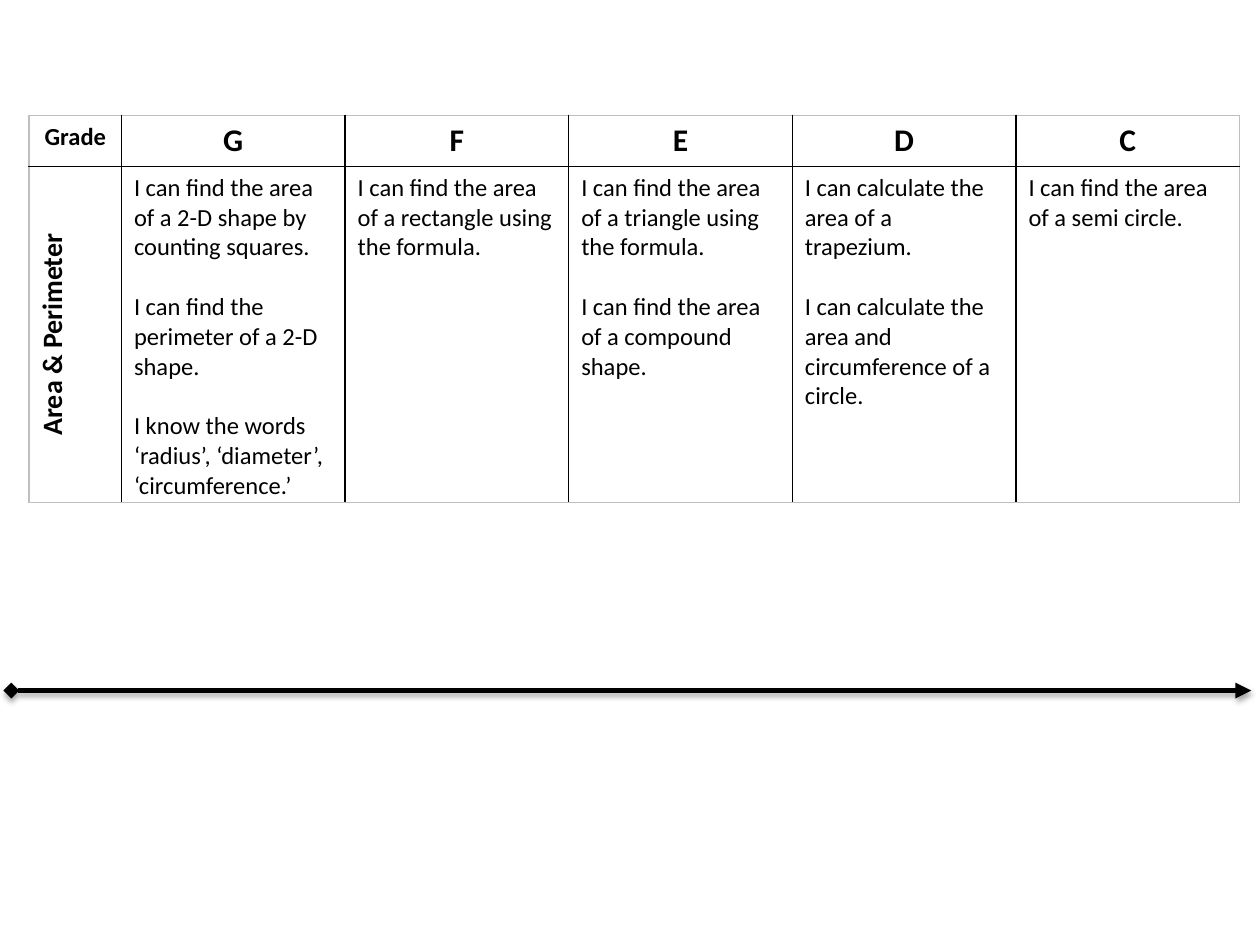
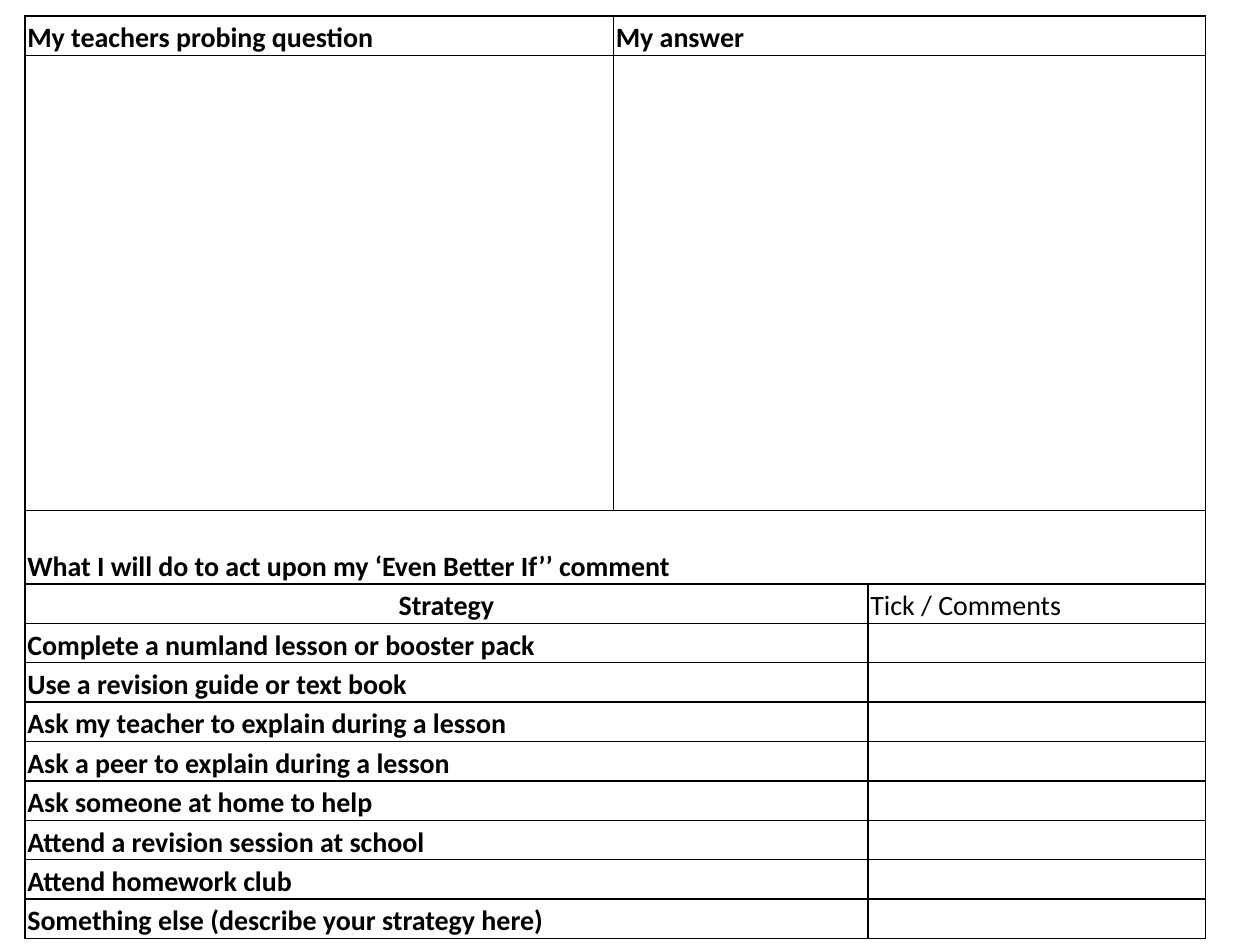
from dataclasses import dataclass

from lxml import etree
from pptx import Presentation
from pptx.dml.color import RGBColor
from pptx.enum.shapes import MSO_CONNECTOR
from pptx.enum.text import MSO_ANCHOR, PP_ALIGN
from pptx.oxml import parse_xml
from pptx.oxml.ns import nsdecls, qn
from pptx.util import Pt


@dataclass(frozen=True)
class Theme:
    font: str = "Calibri"
    ink: str = "000000"
    frame: str = "BFBFBF"
    body: int = 14
    heading: int = 16
    grade: int = 18
    border: float = 1
    arrow: float = 3


class Deck:
    BLANK_LAYOUT = 6

    def __init__(self, theme):
        self.theme = theme
        self.presentation = Presentation()
        self.presentation.slide_width = Pt(720)
        self.presentation.slide_height = Pt(540)
        self.slide = None

    def add_slide(self):
        layout = self.presentation.slide_layouts[self.BLANK_LAYOUT]
        self.slide = self.presentation.slides.add_slide(layout)

    def table(self, left, top, widths, heights, margins, outer):
        """Add an unfilled, ruled table; outer is the colour of its edges."""
        rows, columns = len(heights), len(widths)
        frame = self.slide.shapes.add_table(
            rows, columns, Pt(left), Pt(top), Pt(sum(widths)), Pt(sum(heights)))
        table = frame.table
        table.first_row = table.horz_banding = False
        for column, width in zip(table.columns, widths):
            column.width = Pt(width)
        for row, height in zip(table.rows, heights):
            row.height = Pt(height)
        for r in range(rows):
            for c in range(columns):
                cell = table.cell(r, c)
                (cell.margin_left, cell.margin_top,
                 cell.margin_right, cell.margin_bottom) = map(Pt, margins)
                edges = {"L": c == 0, "R": c == columns - 1,
                         "T": r == 0, "B": r == rows - 1}
                for side, is_outer in edges.items():
                    self.border(cell, side, outer if is_outer else self.theme.ink)
                cell.fill.background()
        return table

    def border(self, cell, side, color):
        properties = cell._tc.get_or_add_tcPr()
        line = etree.SubElement(properties, qn(f"a:ln{side}"),
                                w=str(Pt(self.theme.border)))
        fill = etree.SubElement(line, qn("a:solidFill"))
        etree.SubElement(fill, qn("a:srgbClr"), val=color)

    def cell_text(self, cell, text, size, bold=False, align=PP_ALIGN.LEFT,
                  line_spacing=None, gap=0):
        """Fill a cell; gap is the space between its paragraphs."""
        cell.text_frame.text = text
        for index, paragraph in enumerate(cell.text_frame.paragraphs):
            paragraph.alignment = align
            paragraph.line_spacing = line_spacing
            if index:
                paragraph.space_before = Pt(gap)
            for run in paragraph.runs:
                run.font.name = self.theme.font
                run.font.size = Pt(size)
                run.font.bold = bold
                run.font.color.rgb = RGBColor.from_string(self.theme.ink)

    def arrow(self, left, right, y):
        connector = self.slide.shapes.add_connector(
            MSO_CONNECTOR.STRAIGHT, Pt(left), Pt(y), Pt(right), Pt(y))
        connector.line.width = Pt(self.theme.arrow)
        connector.line.color.rgb = RGBColor.from_string(self.theme.ink)
        line = connector.line._get_or_add_ln()
        etree.SubElement(line, qn("a:headEnd"), type="diamond")
        etree.SubElement(line, qn("a:tailEnd"), type="triangle")
        connector._element.spPr.append(parse_xml(
            f'<a:effectLst {nsdecls("a")}>'
            f'<a:outerShdw blurRad="{Pt(3.1)}" dist="{Pt(1.8)}" dir="5400000" rotWithShape="0">'
            f'<a:srgbClr val="{self.theme.ink}"><a:alpha val="35000"/></a:srgbClr>'
            '</a:outerShdw></a:effectLst>'))


GRADES = {
    "G": ["I can find the area of a 2-D shape by counting squares.",
          "I can find the perimeter of a 2-D shape.",
          "I know the words ‘radius’, ‘diameter’, ‘circumference.’"],
    "F": ["I can find the area of a rectangle using the formula."],
    "E": ["I can find the area of a triangle using the formula.",
          "I can find the area of a compound shape."],
    "D": ["I can calculate the area of a trapezium.",
          "I can calculate the area and circumference of a circle."],
    "C": ["I can find the area of a semi circle."],
}

STRATEGIES = [
    "Complete a numland lesson or booster pack",
    "Use a revision guide or text book",
    "Ask my teacher to explain during a lesson",
    "Ask a peer to explain during a lesson",
    "Ask someone at home to help",
    "Attend a revision session at school",
    "Attend homework club",
    "Something else (describe your strategy here)",
]


def grades_slide(deck):
    theme = deck.theme
    deck.add_slide()
    table = deck.table(16.7, 66, [52.7] + [127.8] * len(GRADES), [29.2, 192],
                       (7.2, 3.6, 7.2, 0), theme.frame)
    center = PP_ALIGN.CENTER
    deck.cell_text(table.cell(0, 0), "Grade", theme.body, True, center)
    topic = table.cell(1, 0)
    deck.cell_text(topic, "Area & Perimeter", theme.heading, True, center)
    topic._tc.get_or_add_tcPr().set("vert", "vert270")
    for column, (grade, skills) in enumerate(GRADES.items(), start=1):
        deck.cell_text(table.cell(0, column), grade, theme.grade, True, center)
        deck.cell_text(table.cell(1, column), "\n".join(skills), theme.body, gap=17.1)
    deck.arrow(6.5, 715, 394.6)


def response_slide(deck):
    theme = deck.theme
    row_height = 22.5
    deck.add_slide()
    heights = [row_height, 260, 42] + [row_height] * (1 + len(STRATEGIES))
    table = deck.table(14.2, 9.2, [336.3, 145.5, 193], heights,
                       (1.44, 0, 1.44, 0), theme.ink)

    def write(row, column, text, bold=True, align=PP_ALIGN.LEFT):
        deck.cell_text(table.cell(row, column), text, theme.heading, bold, align,
                       line_spacing=1.15)

    for row in (0, 1):
        table.cell(row, 1).merge(table.cell(row, 2))
    write(0, 0, "My teachers probing question")
    write(0, 1, "My answer")

    table.cell(2, 0).merge(table.cell(2, 2))
    write(2, 0, "What I will do to act upon my ‘Even Better If’’ comment")
    table.cell(2, 0).vertical_anchor = MSO_ANCHOR.BOTTOM

    for row in range(3, len(heights)):
        table.cell(row, 0).merge(table.cell(row, 1))
    write(3, 0, "Strategy", align=PP_ALIGN.CENTER)
    write(3, 2, "Tick / Comments", bold=False)
    for row, strategy in enumerate(STRATEGIES, start=4):
        write(row, 0, strategy)


def main():
    deck = Deck(Theme())
    grades_slide(deck)
    response_slide(deck)
    deck.presentation.save("out.pptx")


if __name__ == "__main__":
    main()
